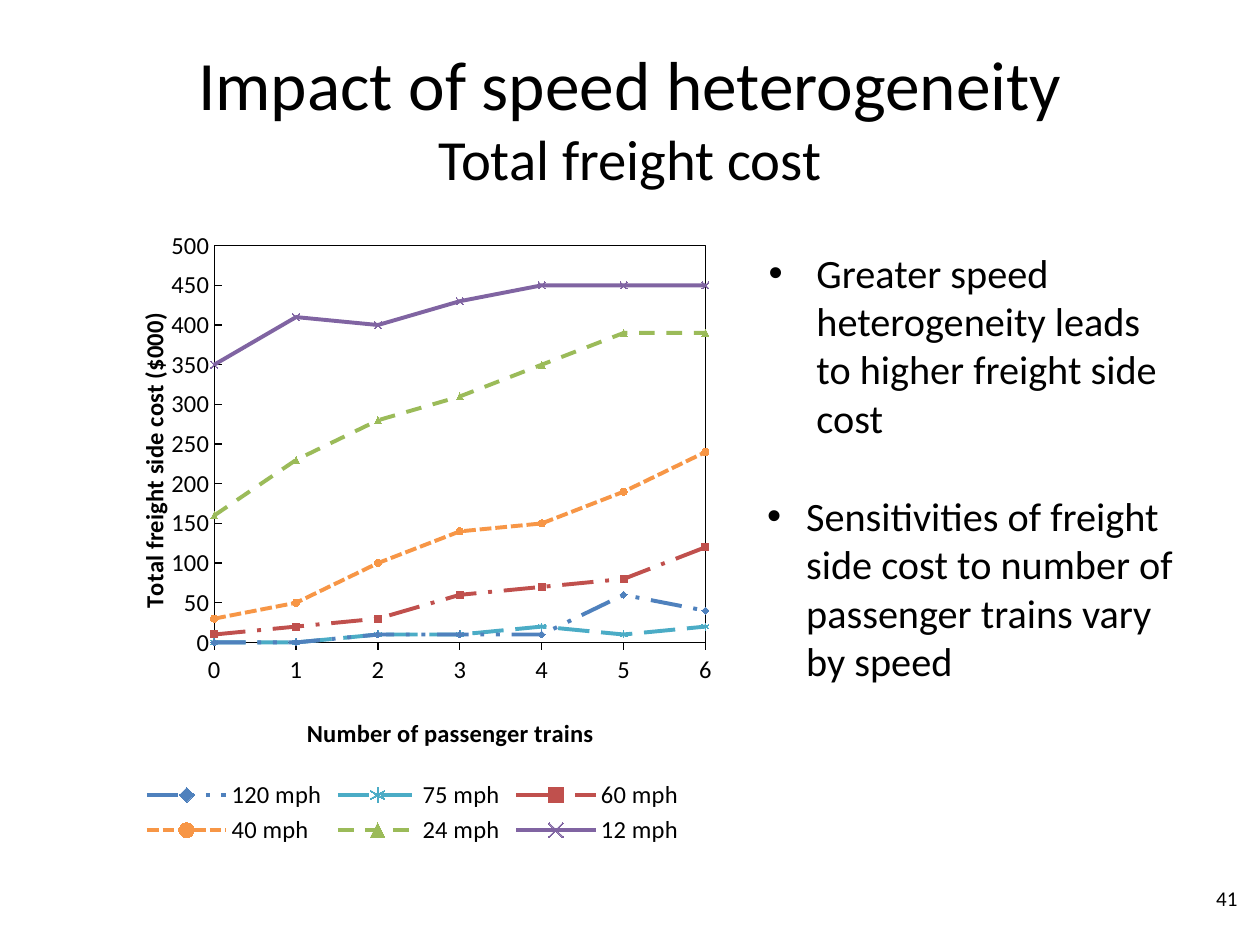
from dataclasses import dataclass

import pptx
import pptx.chart.data
import pptx.dml.color
import pptx.enum.chart
import pptx.enum.dml
import pptx.enum.text
import pptx.oxml
import pptx.oxml.ns
import pptx.util
from lxml import etree
from pptx.util import Inches

BLACK = pptx.dml.color.RGBColor(0x00, 0x00, 0x00)
BLUE = pptx.dml.color.RGBColor(0x4F, 0x81, 0xBD)
TEAL = pptx.dml.color.RGBColor(0x4B, 0xAC, 0xC6)
RED = pptx.dml.color.RGBColor(0xC0, 0x50, 0x4D)
ORANGE = pptx.dml.color.RGBColor(0xF7, 0x96, 0x46)
GREEN = pptx.dml.color.RGBColor(0x9B, 0xBB, 0x59)
PURPLE = pptx.dml.color.RGBColor(0x80, 0x64, 0xA2)
FONT = "Calibri"
MARKER = pptx.enum.chart.XL_MARKER_STYLE
DASH = pptx.enum.dml.MSO_LINE_DASH_STYLE
TICK = pptx.enum.chart.XL_TICK_MARK
ANCHOR = pptx.enum.text.MSO_ANCHOR
ALIGN = pptx.enum.text.PP_ALIGN
qn = pptx.oxml.ns.qn


@dataclass
class SpeedLine:
    name: str
    costs: tuple[int, ...]
    color: pptx.dml.color.RGBColor
    marker: MARKER
    dash: DASH


@dataclass
class Bullet:
    text: str
    indent: float


@dataclass
class AxisStyle:
    title: str
    title_place: tuple[float, float]
    maximum: int
    step: int
    tick: TICK


SPEED_LINES = [
    SpeedLine("120 mph", (0, 0, 10, 10, 10, 60, 40), BLUE, MARKER.DIAMOND, DASH.DASH_DOT_DOT),
    SpeedLine("75 mph", (0, 0, 10, 10, 20, 10, 20), TEAL, MARKER.STAR, DASH.LONG_DASH),
    SpeedLine("60 mph", (10, 20, 30, 60, 70, 80, 120), RED, MARKER.SQUARE, DASH.LONG_DASH_DOT),
    SpeedLine("40 mph", (30, 50, 100, 140, 150, 190, 240), ORANGE, MARKER.CIRCLE, DASH.SQUARE_DOT),
    SpeedLine("24 mph", (160, 230, 280, 310, 350, 390, 390), GREEN, MARKER.TRIANGLE, DASH.DASH),
    SpeedLine("12 mph", (350, 410, 400, 430, 450, 450, 450), PURPLE, MARKER.X, DASH.SOLID),
]


def set_values(target, values: dict) -> None:
    for name, value in values.items():
        setattr(target, name, value)


def set_font(font, size: float, bold: bool = False) -> None:
    set_values(font, {"name": FONT, "size": pptx.util.Pt(size), "bold": bold})
    font.color.rgb = BLACK


def set_box(box, left: float, top: float, width: float, height: float, anchor: ANCHOR) -> None:
    places = {"left": left, "top": top, "width": width, "height": height}
    set_values(box, {name: Inches(value) for name, value in places.items()})
    set_values(box.text_frame, {"word_wrap": True, "vertical_anchor": anchor})


def add_span(para, text: str, size: float) -> None:
    span = para.add_run()
    span.text = text
    set_font(span.font, size)


def write_bullet(box, bullet: Bullet) -> None:
    para = box.text_frame.paragraphs[0]
    para.space_before = pptx.util.Pt(0)
    properties = para._p.get_or_add_pPr()
    properties.set("marL", str(Inches(bullet.indent)))
    properties.set("indent", str(-Inches(bullet.indent)))
    etree.SubElement(properties, qn("a:buFont")).set("typeface", "Arial")
    etree.SubElement(properties, qn("a:buChar")).set("char", "•")
    add_span(para, bullet.text, 23)


def set_layout(element, inner: bool = False, **place: float) -> None:
    for old in element.findall(qn("c:layout")):
        element.remove(old)
    layout = pptx.oxml.parse_xml(
        f'<c:layout {pptx.oxml.ns.nsdecls("c")}><c:manualLayout/></c:layout>'
    )
    values = {"layoutTarget": "inner"} if inner else {}
    values |= {"xMode": "edge", "yMode": "edge"} | place
    for name, value in values.items():
        etree.SubElement(layout[0], qn(f"c:{name}")).set("val", str(value))
    overlay = element.find(qn("c:overlay"))
    if overlay is None:
        element.insert(0, layout)
    else:
        overlay.addprevious(layout)


def style_axis(axis, style: AxisStyle) -> None:
    set_values(axis, {
        "minimum_scale": 0, "maximum_scale": style.maximum, "major_unit": style.step,
        "has_major_gridlines": False, "major_tick_mark": style.tick,
        "minor_tick_mark": TICK.NONE,
    })
    set_values(axis.tick_labels, {"number_format": "#,##0", "number_format_is_linked": False})
    set_font(axis.tick_labels.font, 14)
    axis.format.line.color.rgb = BLACK
    axis.format.line.width = pptx.util.Pt(0.75)
    add_span(axis.axis_title.text_frame.paragraphs[0], style.title, 14)
    axis.axis_title.text_frame.paragraphs[0].runs[0].font.bold = True
    left, top = style.title_place
    set_layout(axis.axis_title._element, x=left, y=top)


def style_series(series, line: SpeedLine) -> None:
    series.smooth = False
    series.format.line.color.rgb = line.color
    set_values(series.format.line, {"width": pptx.util.Pt(2.25), "dash_style": line.dash})
    set_values(series.marker, {"style": line.marker, "size": 4})
    if line.marker in (MARKER.STAR, MARKER.X):
        series.marker.format.fill.background()
    else:
        series.marker.format.fill.solid()
        series.marker.format.fill.fore_color.rgb = line.color
    series.marker.format.line.color.rgb = line.color


def add_cost_chart(slide) -> None:
    data = pptx.chart.data.XyChartData()
    for line in SPEED_LINES:
        points = data.add_series(line.name)
        for trains, cost in enumerate(line.costs):
            points.add_data_point(trains, cost)
    chart = slide.shapes.add_chart(
        pptx.enum.chart.XL_CHART_TYPE.XY_SCATTER_LINES,
        Inches(0.75), Inches(1.75), Inches(5), Inches(5), data,
    ).chart
    set_values(chart, {"has_title": False, "has_legend": True})
    set_font(chart.font, 14)
    chart.plots[0].vary_by_categories = False
    for series, line in zip(chart.plots[0].series, SPEED_LINES):
        style_series(series, line)
    style_axis(chart.category_axis,
               AxisStyle("Number of passenger trains", (0.33, 0.78), 6, 1, TICK.OUTSIDE))
    style_axis(chart.value_axis,
               AxisStyle("Total freight side cost ($000)", (0.06, 0.14), 500, 50, TICK.INSIDE))
    set_values(chart.legend, {
        "position": pptx.enum.chart.XL_LEGEND_POSITION.BOTTOM, "include_in_layout": False,
    })
    set_font(chart.legend.font, 14)
    set_layout(chart.legend._element, x=0.07, y=0.88, w=0.87, h=0.12)
    plot_area = chart._chartSpace.chart.plotArea
    set_layout(plot_area, inner=True, x=0.19, y=0.04, w=0.78, h=0.63)
    plot_area.append(pptx.oxml.parse_xml(
        f'<c:spPr {pptx.oxml.ns.nsdecls("c", "a")}><a:noFill/><a:ln w="9525">'
        f'<a:solidFill><a:srgbClr val="{BLACK}"/></a:solidFill></a:ln></c:spPr>'
    ))


def main() -> None:
    deck = pptx.Presentation()
    set_values(deck, {"slide_width": Inches(10), "slide_height": Inches(7.5)})
    slide = deck.slides.add_slide(deck.slide_layouts[1])

    title = slide.shapes.title
    set_box(title, 0.5, 0.3, 9, 1.25, ANCHOR.MIDDLE)
    para = title.text_frame.paragraphs[0]
    para.alignment = ALIGN.CENTER
    add_span(para, "Impact of speed heterogeneity", 39.6)
    para.add_line_break()
    etree.SubElement(para._p.find(qn("a:br")), qn("a:rPr")).set("sz", "3960")
    add_span(para, "Total freight cost", 32.4)

    body = slide.placeholders[1]
    set_box(body, 6, 1.92, 3.5, 1.92, ANCHOR.TOP)
    write_bullet(body, Bullet(
        "Greater speed heterogeneity leads to higher freight side cost", 0.38))

    number = slide.shapes.add_textbox(0, 0, 0, 0)
    set_box(number, 8.75, 6.93, 1.17, 0.4, ANCHOR.MIDDLE)
    number.text_frame.paragraphs[0].alignment = ALIGN.RIGHT
    add_span(number.text_frame.paragraphs[0], "41", 12)

    add_cost_chart(slide)

    sensitivity = slide.shapes.add_textbox(0, 0, 0, 0)
    set_box(sensitivity, 5.99, 3.85, 3.5, 1.65, ANCHOR.TOP)
    write_bullet(sensitivity, Bullet(
        "Sensitivities of freight side cost to number of passenger trains vary by speed", 0.31))

    deck.save("out.pptx")


if __name__ == "__main__":
    main()
